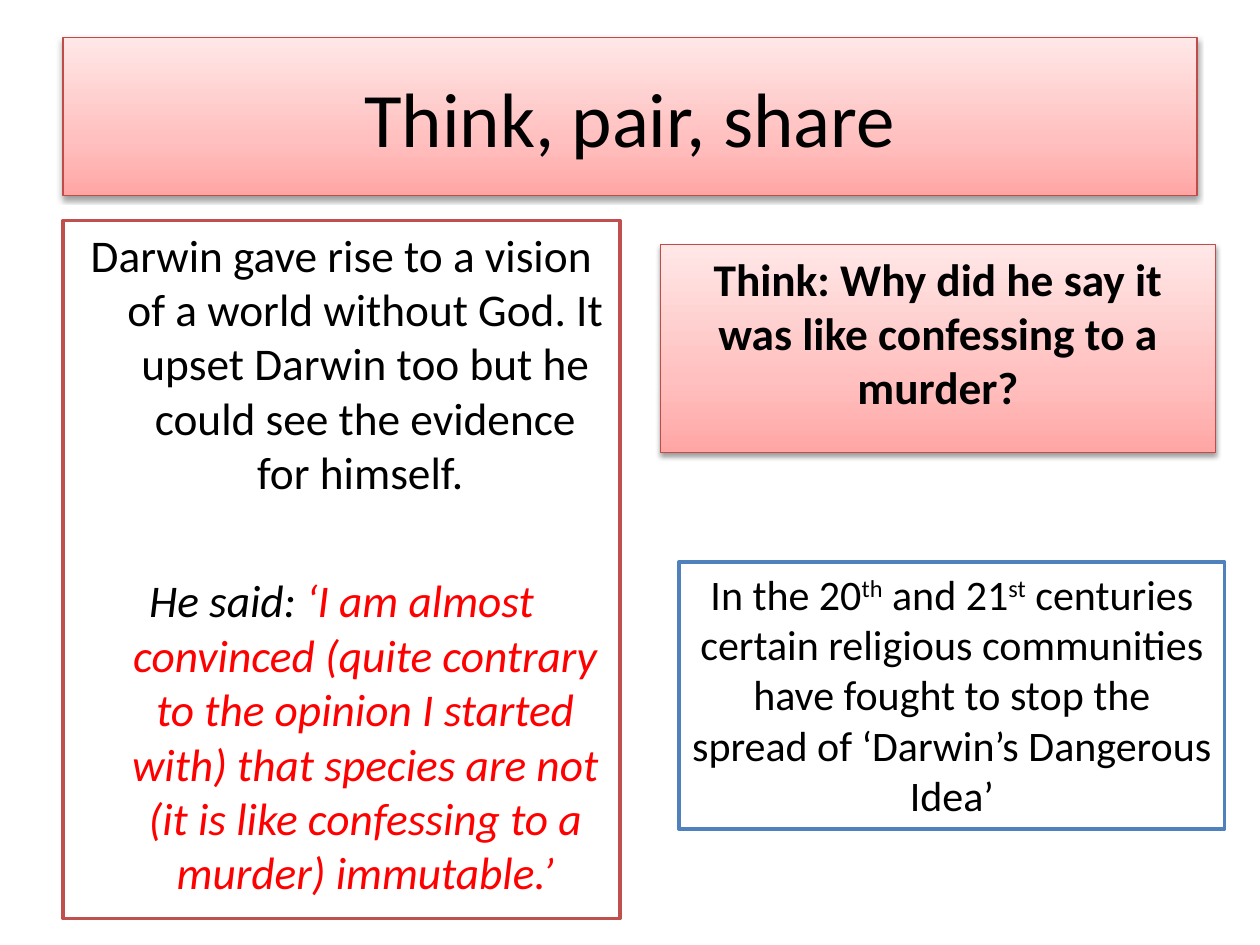
from copy import deepcopy

from pptx import Presentation
from pptx.dml.color import RGBColor
from pptx.enum.shapes import MSO_SHAPE as Shape
from pptx.enum.text import MSO_ANCHOR as Anchor, MSO_AUTO_SIZE as AutoSize, PP_ALIGN as Align
from pptx.oxml import parse_xml
from pptx.oxml.ns import nsdecls, qn
from pptx.util import Inches, Pt

BLACK, RED = "000000", "FF0000"
PINK_STOPS = [(0, "FFA6A5"), (0.35, "FFC0BF"), (1, "FFE7E7")]


def color(hex_value):
    return RGBColor.from_string(hex_value)


def place(box, left, top, width, height):
    box.left, box.top = Inches(left), Inches(top)
    box.width, box.height = Inches(width), Inches(height)


def outline(box, hex_value, width):
    box.line.color.rgb = color(hex_value)
    box.line.width = Pt(width)


def style_plain(box, border):
    box.fill.solid()
    box.fill.fore_color.rgb = color("FFFFFF")
    outline(box, border, 2)
    box.shadow.inherit = False


def style_pink(box):
    box.fill.gradient()
    box.fill.gradient_angle = 90
    stop_list = box._element.spPr.find(".//" + qn("a:gsLst"))
    stop_list.append(deepcopy(stop_list[0]))
    for stop, (position, hex_value) in zip(box.fill.gradient_stops, PINK_STOPS):
        stop.position = position
        stop.color.rgb = color(hex_value)
    outline(box, "BF4C48", 0.75)
    box.shadow.inherit = False
    box._element.spPr.find(qn("a:effectLst")).append(parse_xml(
        f'<a:outerShdw {nsdecls("a")} blurRad="{Pt(3.1)}" dist="{Pt(1.6)}" '
        'dir="5400000" rotWithShape="0"><a:srgbClr val="000000">'
        '<a:alpha val="38000"/></a:srgbClr></a:outerShdw>'))


def prepare_text(box, anchor=Anchor.TOP):
    frame = box.text_frame
    frame.word_wrap = True
    frame.auto_size = AutoSize.NONE
    frame.vertical_anchor = anchor
    return frame


def format_run(run, size, hex_value=BLACK, bold=False, italic=False):
    font = run.font
    font.name, font.size = "Calibri", Pt(size)
    font.bold, font.italic = bold, italic
    font.color.rgb = color(hex_value)


def add_text(paragraph, text, size, **look):
    run = paragraph.add_run()
    run.text = text
    format_run(run, size, **look)
    return run


def format_body(paragraph, space_before, indent=0):
    paragraph.alignment = Align.CENTER
    paragraph.space_before = Pt(space_before)
    properties = paragraph._p.get_or_add_pPr()
    properties.set("marL", str(Inches(indent)))
    properties.set("indent", str(-Inches(indent)))
    properties.append(parse_xml(f'<a:buNone {nsdecls("a")}/>'))


def fill_title(title):
    place(title, 0.5, 0.3, 9, 1.25)
    style_pink(title)
    heading = prepare_text(title, Anchor.MIDDLE).paragraphs[0]
    heading.text = "Think, pair, share"
    heading.alignment = Align.CENTER
    format_run(heading.runs[0], 44)


def fill_darwin(darwin):
    place(darwin, 0.5, 1.75, 4.42, 5.54)
    style_plain(darwin, "C0504D")
    frame = prepare_text(darwin)
    vision = frame.paragraphs[0]
    format_body(vision, 5.2, 0.38)
    add_text(vision, "Darwin gave rise to a vision of a world without God. It upset "
             "Darwin too but he could see the evidence for himself. ", 25.9)
    quote = frame.add_paragraph()
    format_body(quote, 42, 0.38)
    add_text(quote, "He said: ", 25.9, italic=True)
    add_text(quote, "‘I am almost convinced (quite contrary to the opinion I started "
             "with) that species are not (it is like confessing to a murder) immutable.’",
             25.9, hex_value=RED, italic=True)


def fill_question(question):
    place(question, 5.24, 1.94, 4.41, 1.65)
    style_pink(question)
    think = prepare_text(question).paragraphs[0]
    format_body(think, 5.2)
    add_text(think, "Think: Why did he say it was like confessing to a murder?",
             25.9, bold=True)


def add_communities(slide):
    communities = slide.shapes.add_shape(
        Shape.RECTANGLE, Inches(5.39), Inches(4.46), Inches(4.33), Inches(2.12))
    style_plain(communities, "4F81BD")
    frame = prepare_text(communities)
    frame.auto_size = AutoSize.SHAPE_TO_FIT_TEXT
    sentence = frame.paragraphs[0]
    sentence.alignment = Align.CENTER
    for text, raised in [
        ("In the 20", False), ("th", True), (" and 21", False), ("st", True),
        (" centuries certain religious communities have fought to stop the "
         "spread of ‘Darwin’s Dangerous Idea’", False),
    ]:
        run = add_text(sentence, text, 24)
        if raised:
            run._r.get_or_add_rPr().set("baseline", "30000")


def main():
    deck = Presentation()
    deck.slide_width, deck.slide_height = Inches(10), Inches(7.5)
    slide = deck.slides.add_slide(deck.slide_layouts[3])
    title, darwin, question = slide.placeholders
    fill_title(title)
    fill_darwin(darwin)
    fill_question(question)
    add_communities(slide)
    deck.save("out.pptx")


if __name__ == "__main__":
    main()
